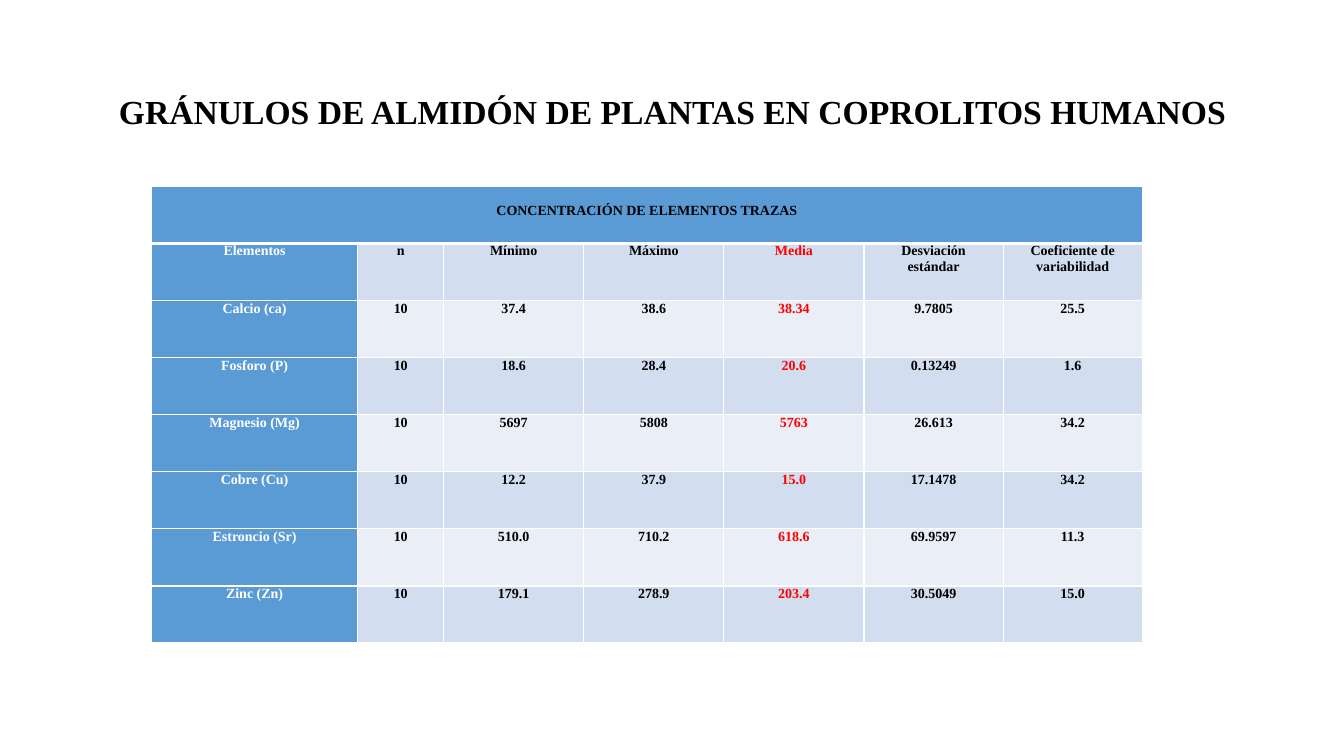
from lxml.etree import SubElement
from pptx import Presentation
from pptx.dml.color import RGBColor
from pptx.enum.text import MSO_ANCHOR as Anchor, PP_ALIGN as Align
from pptx.oxml.ns import qn
from pptx.util import Inches, Pt

BLACK = RGBColor(0x00, 0x00, 0x00)
WHITE = RGBColor(0xFF, 0xFF, 0xFF)
RED = RGBColor(0xFF, 0x00, 0x00)
BLUE = RGBColor(0x5B, 0x9B, 0xD5)
BAND_DARK = RGBColor(0xD2, 0xDE, 0xEF)
BAND_LIGHT = RGBColor(0xEA, 0xEF, 0xF7)

TITLE = "GRÁNULOS DE ALMIDÓN DE PLANTAS EN COPROLITOS HUMANOS"
BANNER = "CONCENTRACIÓN DE ELEMENTOS TRAZAS"
ROWS = [
    ["Elementos", "n", "Mínimo", "Máximo", "Media",
     "Desviación\nestándar", "Coeficiente de variabilidad"],
    ["Calcio (ca)", "10", "37.4", "38.6", "38.34", "9.7805", "25.5"],
    ["Fosforo (P)", "10", "18.6", "28.4", "20.6", "0.13249", "1.6"],
    ["Magnesio (Mg)", "10", "5697", "5808", "5763", "26.613", "34.2"],
    ["Cobre (Cu)", "10", "12.2", "37.9", "15.0", "17.1478", "34.2"],
    ["Estroncio (Sr)", "10", "510.0", "710.2", "618.6", "69.9597", "11.3"],
    ["Zinc (Zn)", "10", "179.1", "278.9", "203.4", "30.5049", "15.0"],
]
COLUMN_WIDTHS = [2.05, 0.85, 1.39, 1.39, 1.39, 1.38, 1.38]
TABLE_HEIGHT = 4.53
MEAN_COLUMN = 4


def apply(target, values):
    for name, value in values.items():
        setattr(target, name, value)


class SlideBuilder:
    font_name = "Times New Roman"

    def __init__(self, presentation):
        self.slide = presentation.slides.add_slide(presentation.slide_layouts[5])

    def set_text(self, frame, text, size, color, **paragraph_format):
        frame.text = text
        for paragraph in frame.paragraphs:
            apply(paragraph, {"alignment": Align.CENTER, **paragraph_format})
            for run in paragraph.runs:
                apply(run.font, {"name": self.font_name, "size": Pt(size), "bold": True})
                run.font.color.rgb = color

    def title(self, text, left, top, width, height):
        shape = self.slide.shapes.title
        apply(shape, {"left": Inches(left), "top": Inches(top),
                      "width": Inches(width), "height": Inches(height)})
        apply(shape.text_frame, {"word_wrap": True, "vertical_anchor": Anchor.MIDDLE})
        self.set_text(shape.text_frame, text, 24, BLACK, line_spacing=0.9)

    def borders(self, cell, **widths):
        properties = cell._tc.get_or_add_tcPr()
        for side in "LRTB":
            line = SubElement(properties, qn(f"a:ln{side}"), w=str(Pt(widths.get(side, 1))))
            fill = SubElement(line, qn("a:solidFill"))
            SubElement(fill, qn("a:srgbClr"), val=str(WHITE))

    def cell(self, cell, text, fill, color, top_margin=0):
        apply(cell, {"margin_left": Inches(0.07), "margin_right": Inches(0.07),
                     "margin_top": Inches(top_margin), "margin_bottom": 0,
                     "vertical_anchor": Anchor.TOP})
        cell.fill.solid()
        cell.fill.fore_color.rgb = fill
        self.set_text(cell.text_frame, text, 10, color)

    def table(self, left, top, widths, height, banner, rows):
        row_count = len(rows) + 1
        table = self.slide.shapes.add_table(
            row_count, len(widths), Inches(left), Inches(top),
            Inches(sum(widths)), Inches(height)).table
        apply(table, {"first_row": False, "horz_banding": False})
        for column, width in zip(table.columns, widths):
            column.width = Inches(width)
        for row in table.rows:
            row.height = Inches(height / row_count)

        # Banner across all columns, with a thick rule below
        for column in range(len(widths)):
            self.borders(table.cell(0, column), B=3)
            self.borders(table.cell(1, column), T=3)
        table.cell(0, 0).merge(table.cell(0, len(widths) - 1))
        self.cell(table.cell(0, 0), banner, BLUE, BLACK, top_margin=0.16)

        # Banded rows with a blue first column and red means
        for row_index, values in enumerate(rows, start=1):
            band = BAND_DARK if row_index % 2 else BAND_LIGHT
            for column, text in enumerate(values):
                cell = table.cell(row_index, column)
                if row_index > 1:
                    self.borders(cell)
                fill = band if column else BLUE
                color = {0: WHITE, MEAN_COLUMN: RED}.get(column, BLACK)
                self.cell(cell, text, fill, color)


def main():
    presentation = Presentation()
    apply(presentation, {"slide_width": Inches(13.33), "slide_height": Inches(7.5)})
    builder = SlideBuilder(presentation)
    builder.title(TITLE, 0.92, 0.4, 11.5, 1.45)
    builder.table(1.5, 1.85, COLUMN_WIDTHS, TABLE_HEIGHT, BANNER, ROWS)
    presentation.save("out.pptx")


if __name__ == "__main__":
    main()
